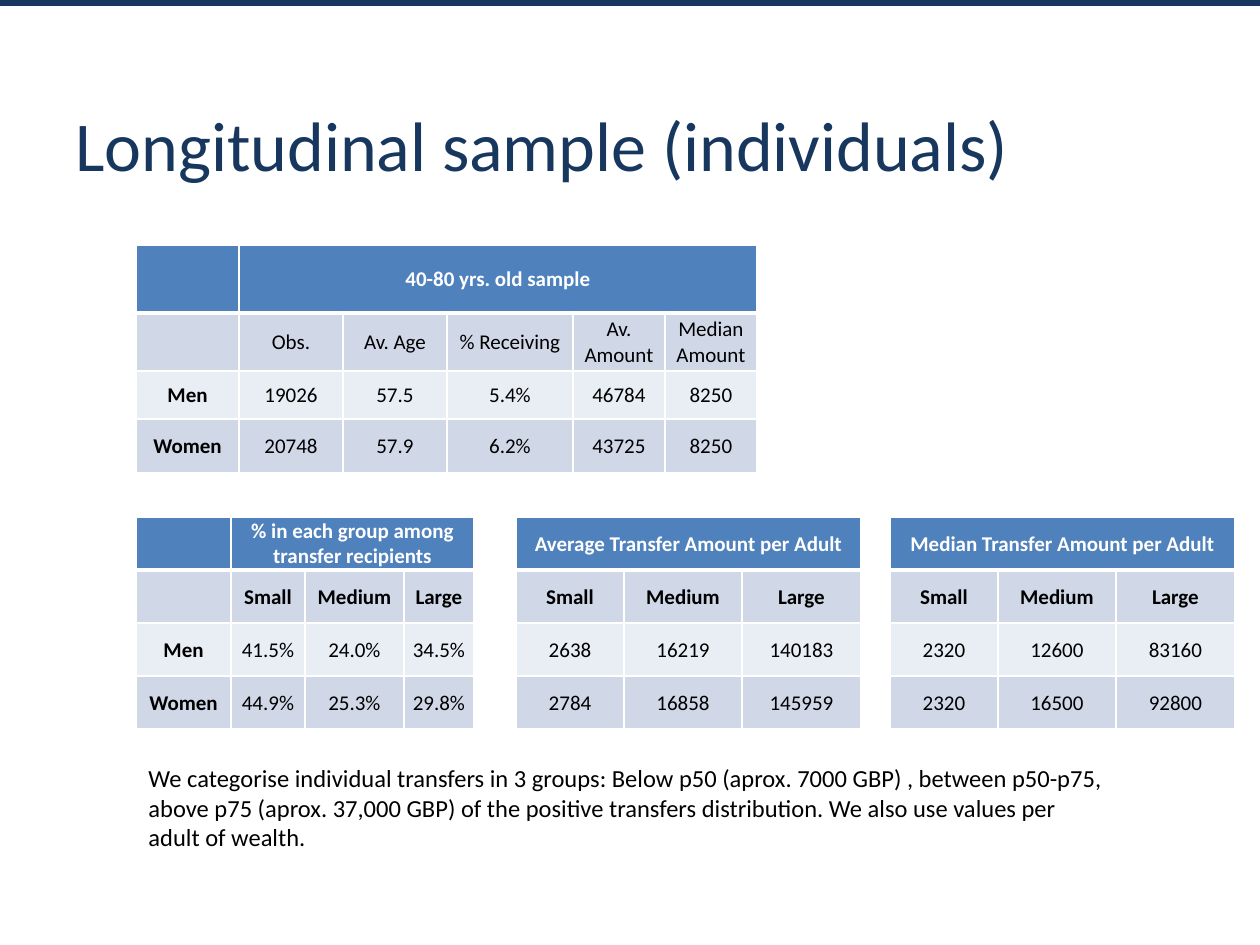
from pptx import Presentation
from pptx.dml.color import RGBColor
from pptx.enum.shapes import MSO_SHAPE as Shape
from pptx.enum.text import MSO_ANCHOR as Anchor, PP_ALIGN as Align
from pptx.oxml.ns import qn
from pptx.util import Emu, Pt
from lxml.etree import SubElement

PX = 914400 / 126
NAVY = RGBColor(0x17, 0x37, 0x5E)
BLUE = RGBColor(0x4F, 0x81, 0xBD)
BAND_DARK = RGBColor(0xD0, 0xD8, 0xE8)
BAND_LIGHT = RGBColor(0xE9, 0xED, 0xF4)
WHITE = RGBColor(0xFF, 0xFF, 0xFF)
BLACK = RGBColor(0, 0, 0)


def px(length):
    return Emu(round(length * PX))


def set_all(target, values):
    for name, value in values.items():
        setattr(target, name, value)


class SlideBuilder:
    font_name = "Calibri"
    cell_format = {
        "vertical_anchor": Anchor.MIDDLE,
        "margin_left": px(1), "margin_right": px(1),
        "margin_top": px(1), "margin_bottom": px(0),
    }

    def __init__(self, slide):
        self.slide = slide

    def add_text_run(self, paragraph, text, size, color, bold=False):
        run = paragraph.add_run()
        run.text = text
        set_all(run.font, {"name": self.font_name, "size": Pt(size), "bold": bold})
        run.font.color.rgb = color

    def bar(self, left, top, width, height, color):
        shape = self.slide.shapes.add_shape(Shape.RECTANGLE, *map(px, (left, top, width, height)))
        shape.shadow.inherit = False
        shape.fill.solid()
        shape.fill.fore_color.rgb = color
        shape.line.fill.background()

    def text(self, left, top, width, height, text, size, color, anchor=Anchor.TOP):
        box = self.slide.shapes.add_textbox(*map(px, (left, top, width, height)))
        set_all(box.text_frame, {"word_wrap": True, "vertical_anchor": anchor})
        self.add_text_run(box.text_frame.paragraphs[0], text, size, color)

    def borders(self, cell, top, bottom):
        properties = cell._tc.get_or_add_tcPr()
        for side, points in zip("LRTB", (1, 1, top, bottom)):
            line = SubElement(properties, qn(f"a:ln{side}"), w=str(Pt(points)))
            fill = SubElement(line, qn("a:solidFill"))
            SubElement(fill, qn("a:srgbClr"), val=str(WHITE))

    def table(self, left, top, widths, heights, heading, rows, bold_subheads=True):
        """Draw a heading over the data columns, a subheading row, then the data."""
        has_labels = not rows[0][0]
        first = int(has_labels)
        frame = self.slide.shapes.add_table(
            len(heights), len(widths), px(left), px(top), px(sum(widths)), px(sum(heights)))
        table = frame.table
        for column, width in zip(table.columns, widths):
            column.width = px(width)
        for row, height in zip(table.rows, heights):
            row.height = px(height)

        heading_row = [heading if c == first else "" for c in range(len(widths))]
        for r, texts in enumerate([heading_row, *rows]):
            for c, text in enumerate(texts):
                cell = table.cell(r, c)
                set_all(cell, self.cell_format)
                self.borders(cell, 3 if r == 1 else 1, 3 if r == 0 else 1)
                cell.fill.solid()
                cell.fill.fore_color.rgb = BLUE if r == 0 else BAND_DARK if r % 2 else BAND_LIGHT
                paragraph = cell.text_frame.paragraphs[0]
                paragraph.alignment = Align.CENTER
                if text:
                    bold = r == 0 or (r == 1 and bold_subheads) or (c == 0 and has_labels)
                    self.add_text_run(paragraph, text, 12, BLACK if r else WHITE, bold)
        table.cell(0, first).merge(table.cell(0, len(widths) - 1))


def main():
    presentation = Presentation()
    set_all(presentation, {"slide_width": px(1260), "slide_height": px(945)})
    builder = SlideBuilder(presentation.slides.add_slide(presentation.slide_layouts[6]))

    # Top bar and title
    builder.bar(0, 0, 1260, 6, NAVY)
    builder.text(63, 45, 1134, 198, "Longitudinal sample (individuals)", 40, NAVY, Anchor.MIDDLE)

    # Whole sample
    builder.table(
        136, 245, [103, 104, 104, 126, 92, 92], [68, 58, 48, 54], "40-80 yrs. old sample",
        [["", "Obs.", "Av. Age", "% Receiving", "Av. Amount", "Median Amount"],
         ["Men", "19026", "57.5", "5.4%", "46784", "8250"],
         ["Women", "20748", "57.9", "6.2%", "43725", "8250"]],
        bold_subheads=False)

    # Transfer recipients by size of transfer
    sizes = ["Small", "Medium", "Large"]
    group_widths, amount_widths = [95, 74, 99, 70], [108, 118, 119]
    recipient_tables = [
        (136, group_widths, "% in each group among transfer recipients",
         [["", *sizes], ["Men", "41.5%", "24.0%", "34.5%"], ["Women", "44.9%", "25.3%", "29.8%"]]),
        (516, amount_widths, "Average Transfer Amount per Adult",
         [sizes, ["2638", "16219", "140183"], ["2784", "16858", "145959"]]),
        (890, amount_widths, "Median Transfer Amount per Adult",
         [sizes, ["2320", "12600", "83160"], ["2320", "16500", "92800"]]),
    ]
    for left, widths, heading, rows in recipient_tables:
        builder.table(left, 517, widths, [53] * 4, heading, rows)

    # Explanation
    builder.text(
        136, 757, 989, 102,
        "We categorise individual transfers in 3 groups: Below p50 (aprox. 7000 GBP) , "
        "between p50-p75, above p75 (aprox. 37,000 GBP) of the positive transfers "
        "distribution. We also use values per adult of wealth.", 14, BLACK)

    presentation.save("out.pptx")


if __name__ == "__main__":
    main()
